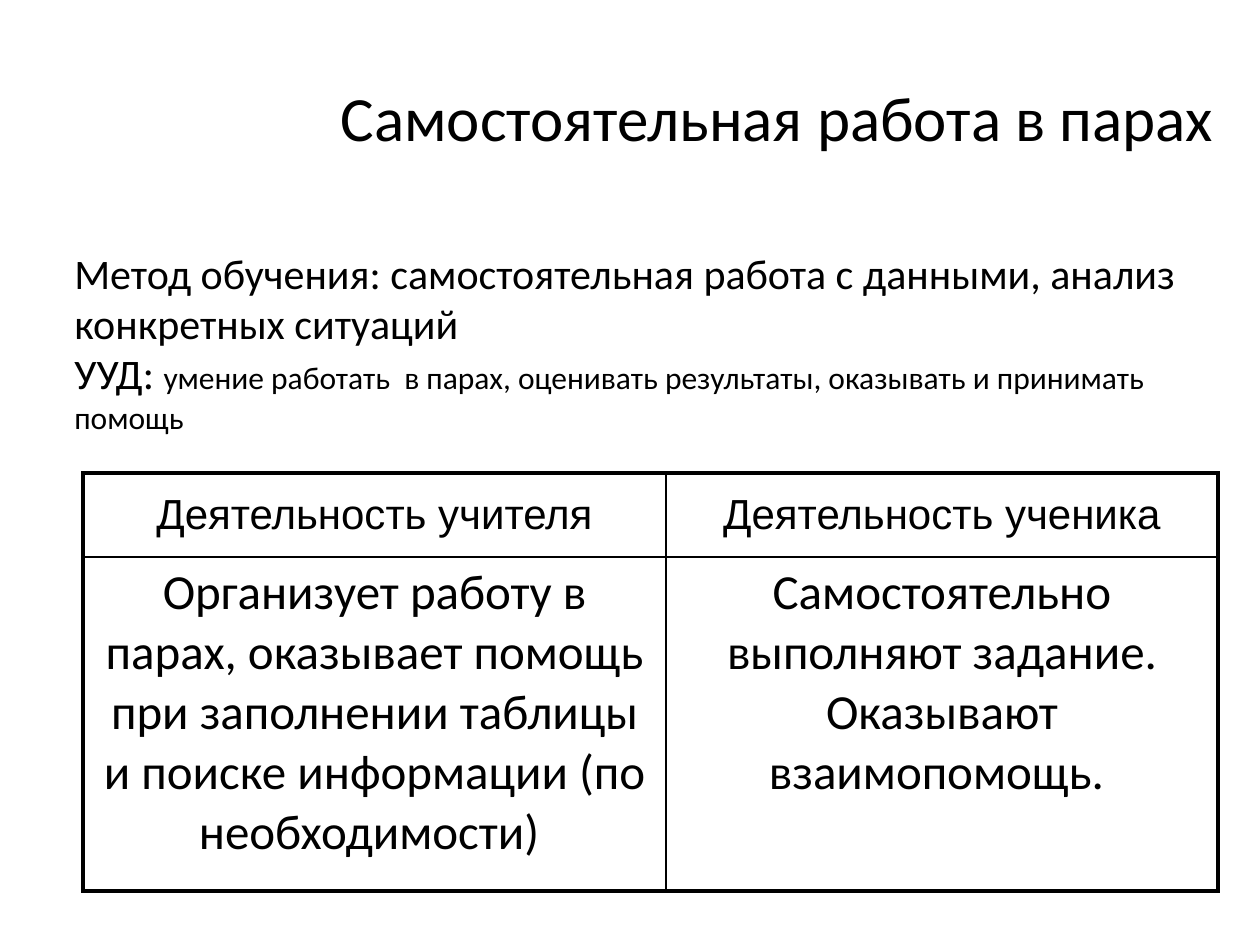
from dataclasses import dataclass

from lxml import etree
from pptx import Presentation
from pptx.dml.color import RGBColor
from pptx.enum.shapes import MSO_SHAPE
from pptx.enum.text import MSO_ANCHOR, MSO_AUTO_SIZE, PP_ALIGN
from pptx.oxml.ns import qn
from pptx.util import Emu, Pt

RECT = MSO_SHAPE.RECTANGLE
TOP, MIDDLE = MSO_ANCHOR.TOP, MSO_ANCHOR.MIDDLE
LEFT, CENTER = PP_ALIGN.LEFT, PP_ALIGN.CENTER
GROW = MSO_AUTO_SIZE.SHAPE_TO_FIT_TEXT
COLORS = {"ink": "000000", "paper": "FFFFFF"}
OUTER, INNER = 2.25, 1


@dataclass
class Span:
    text: str
    size: int
    font: str = "Calibri"


@dataclass
class Cell:
    span: Span
    anchor: MSO_ANCHOR = TOP


TITLE = Span("Самостоятельная работа в парах", 36)
METHOD = [
    [Span("Метод обучения: самостоятельная работа с данными, анализ конкретных ситуаций", 24)],
    [Span("УУД: ", 24),
     Span("умение работать  в парах, оценивать результаты, оказывать и принимать помощь", 18)],
]
COLS, ROWS = [583, 552], [84, 334]
GRID = [
    [Cell(Span("Деятельность учителя", 24, "Arial"), MIDDLE),
     Cell(Span("Деятельность ученика", 24, "Arial"), MIDDLE)],
    [Cell(Span("Организует работу в парах, оказывает помощь при заполнении таблицы "
               "и поиске информации (по необходимости) ", 28)),
     Cell(Span("Самостоятельно выполняют задание. Оказывают взаимопомощь. ", 28))],
]


def px(count: int) -> Emu:
    return Emu(round(count * 914400 / 126))


def color(name: str) -> RGBColor:
    return RGBColor.from_string(COLORS[name])


def write(frame, lines: list[list[Span]], align: PP_ALIGN) -> None:
    """Fill a text frame with one paragraph per list of spans."""
    frame.word_wrap = True
    for i, line in enumerate(lines):
        para = frame.add_paragraph() if i else frame.paragraphs[0]
        para.alignment = align
        for span in line:
            run = para.add_run()
            run.text = span.text
            run.font.size = Pt(span.size)
            run.font.name = span.font
            run.font.color.rgb = color("ink")


def border(cell, widths: dict[str, float]) -> None:
    props = cell._tc.get_or_add_tcPr()
    for side, width in widths.items():
        line = etree.SubElement(props, qn(f"a:ln{side}"), w=str(Pt(width)))
        fill = etree.SubElement(line, qn("a:solidFill"))
        etree.SubElement(fill, qn("a:srgbClr"), val=COLORS["ink"])


def draw_title(slide) -> None:
    box = slide.shapes.add_textbox(px(294), px(38), px(966), px(157))
    write(box.text_frame, [[TITLE]], CENTER)
    box.text_frame.vertical_anchor = MIDDLE


def draw_method(slide) -> None:
    box = slide.shapes.add_shape(RECT, px(62), px(241), px(1198), px(202))
    box.shadow.inherit = False
    box.fill.solid()
    box.fill.fore_color.rgb = color("paper")
    box.line.fill.background()
    write(box.text_frame, METHOD, LEFT)
    box.text_frame.vertical_anchor = TOP
    box.text_frame.auto_size = GROW


def draw_table(slide) -> None:
    table = slide.shapes.add_table(
        len(ROWS), len(COLS), px(83), px(473), px(sum(COLS)), px(sum(ROWS))).table
    table.first_row = table.horz_banding = False
    for col, width in zip(table.columns, COLS):
        col.width = px(width)
    for row, height in zip(table.rows, ROWS):
        row.height = px(height)
    for r, line in enumerate(GRID):
        for c, item in enumerate(line):
            cell = table.cell(r, c)
            write(cell.text_frame, [[item.span]], CENTER)
            cell.vertical_anchor = item.anchor
            edges = {"L": c == 0, "R": c == len(COLS) - 1,
                     "T": r == 0, "B": r == len(ROWS) - 1}
            border(cell, {side: OUTER if edge else INNER for side, edge in edges.items()})
            cell.fill.background()


def main() -> None:
    deck = Presentation()
    deck.slide_width, deck.slide_height = px(1260), px(945)
    slide = deck.slides.add_slide(deck.slide_layouts[6])
    draw_title(slide)
    draw_method(slide)
    draw_table(slide)
    deck.save("out.pptx")


if __name__ == "__main__":
    main()
